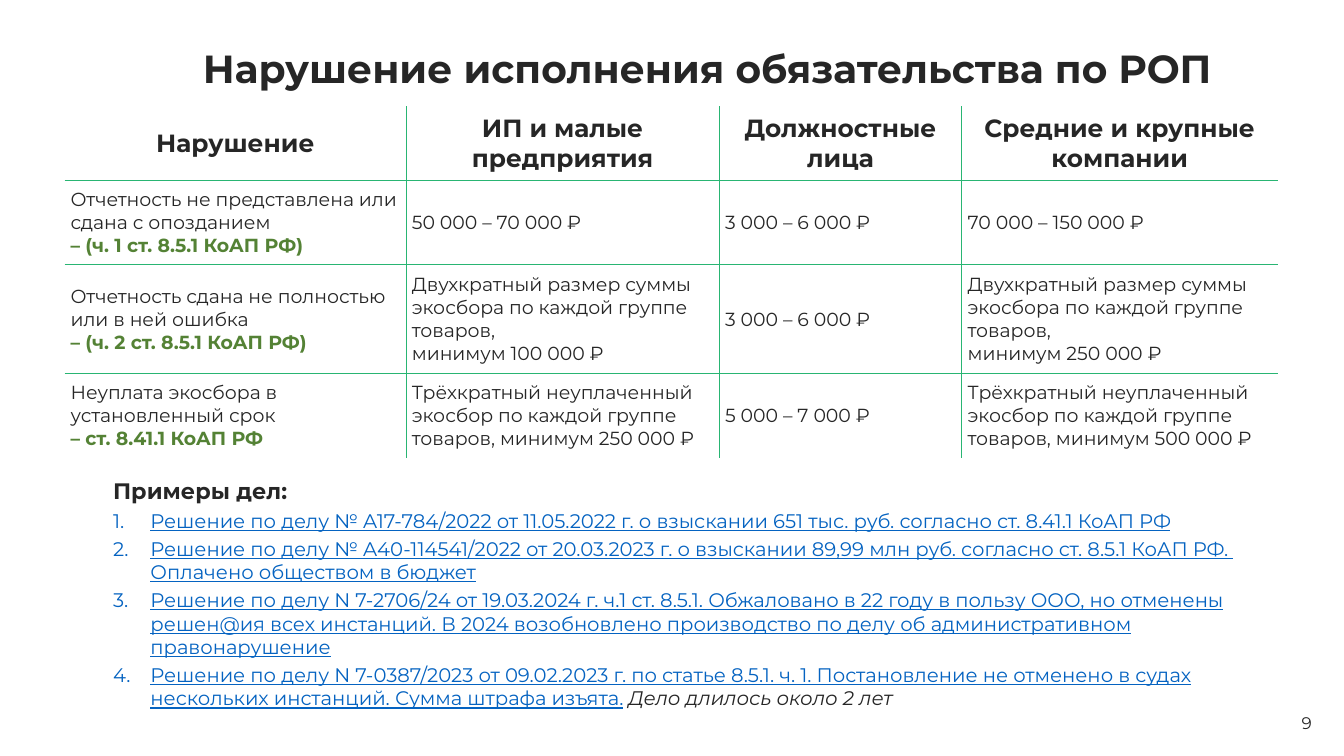
from dataclasses import dataclass

from lxml.etree import SubElement as Sub
from pptx import Presentation
from pptx.dml.color import RGBColor as RGB
from pptx.enum.text import MSO_ANCHOR as Anchor, MSO_AUTO_SIZE as Fit, PP_ALIGN as Align
from pptx.oxml.ns import qn
from pptx.util import Inches, Pt


@dataclass(frozen=True)
class Theme:
    font: str = "Montserrat"
    ink: str = "262626"
    law: str = "548235"
    link: str = "0563C1"
    line: str = "29B573"
    title: float = 33.1
    head: float = 21
    cell: float = 16
    lead: float = 18.9
    case: float = 16.6
    page: float = 14.2


T = Theme()

HEADS = ["Нарушение", "ИП и малые предприятия", "Должностные лица",
         "Средние и крупные компании"]
DOUBLE = "Двухкратный размер суммы экосбора по каждой группе товаров, \nминимум {} 000 ₽"
TRIPLE = "Трёхкратный неуплаченный экосбор по каждой группе товаров, минимум {} 000 ₽"
ROWS = [
    (("Отчетность не представлена или сдана с опозданием \n",
      "– (ч. 1 ст. 8.5.1 КоАП РФ)"),
     "50 000 – 70 000 ₽", "3 000 – 6 000 ₽", "70 000 – 150 000 ₽"),
    (("Отчетность сдана не полностью или в ней ошибка \n",
      "– (ч. 2 ст. 8.5.1 КоАП РФ)"),
     DOUBLE.format(100), "3 000 – 6 000 ₽", DOUBLE.format(250)),
    (("Неуплата экосбора в установленный срок \n", "– ст. 8.41.1 КоАП РФ"),
     TRIPLE.format(250), "5 000 – 7 000 ₽", TRIPLE.format(500)),
]
COLS = [4.01, 3.68, 2.85, 3.71]
HIGHS = [0.87, 0.99, 1.28, 0.99]

CASES = [
    "Решение по делу № А17-784/2022 от 11.05.2022 г. о взыскании 651 тыс. руб. "
    "согласно ст. 8.41.1 КоАП РФ",
    "Решение по делу № А40-114541/2022 от 20.03.2023 г. о взыскании 89,99 млн руб. "
    "согласно ст. 8.5.1 КоАП РФ. \nОплачено обществом в бюджет",
    "Решение по делу N 7-2706/24 от 19.03.2024 г. ч.1 ст. 8.5.1. Обжаловано в 22 году "
    "в пользу ООО, но отменены решен@ия всех инстанций. В 2024 возобновлено "
    "производство по делу об административном правонарушение",
    "Решение по делу N 7-0387/2023 от 09.02.2023 г. по статье 8.5.1. ч. 1. "
    "Постановление не отменено в судах нескольких инстанций. Сумма штрафа изъята.",
]
NOTE = "Дело длилось около 2 лет"


def write(para, text, size, color=T.ink, bold=False, italic=False, under=False):
    """Add text to a paragraph; a newline becomes a line break."""
    for i, part in enumerate(text.split("\n")):
        if i:
            para.add_line_break()
        if not part:
            continue
        run = para.add_run()
        run.text = part
        font = run.font
        font.name, font.size = T.font, Pt(size)
        font.bold, font.italic, font.underline = bold, italic, under
        font.color.rgb = RGB.from_string(color)


def add_text(slide, box):
    frame = slide.shapes.add_textbox(*map(Inches, box)).text_frame
    frame.word_wrap = True
    return frame


def add_title(slide, box, text):
    title = slide.shapes.title
    title.left, title.top, title.width, title.height = map(Inches, box)
    frame = title.text_frame
    frame.word_wrap, frame.auto_size = True, Fit.NONE
    frame.vertical_anchor = Anchor.TOP
    para = frame.paragraphs[0]
    para.alignment = Align.CENTER
    para.line_spacing, para.space_before = 1.25, Pt(11.8)
    write(para, text, T.title, bold=True)


def set_edges(cell, edges):
    """Draw the named sides of a cell and clear the others."""
    props = cell._tc.get_or_add_tcPr()
    for side in "LRTB":
        line = Sub(props, qn(f"a:ln{side}"), w=str(Pt(0.75)))
        if side in edges:
            fill = Sub(line, qn("a:solidFill"))
            Sub(fill, qn("a:srgbClr"), val=T.line)
        else:
            Sub(line, qn("a:noFill"))


def add_grid(slide, box):
    grid = slide.shapes.add_table(len(HIGHS), len(COLS), *map(Inches, box)).table
    grid.first_row = grid.horz_banding = False
    for col, width in zip(grid.columns, COLS):
        col.width = Inches(width)
    for row, high in zip(grid.rows, HIGHS):
        row.height = Inches(high)
    for r, row in enumerate([HEADS, *ROWS]):
        for c, item in enumerate(row):
            cell = grid.cell(r, c)
            cell.vertical_anchor = Anchor.MIDDLE
            cell.margin_left = cell.margin_right = Inches(0.07)
            cell.margin_top = cell.margin_bottom = Inches(0.07)
            inner = {"L": c > 0, "R": c < len(COLS) - 1,
                     "T": r > 0, "B": r < len(HIGHS) - 1}
            set_edges(cell, [side for side, on in inner.items() if on])
            cell.fill.background()
            para = cell.text_frame.paragraphs[0]
            if r == 0:
                para.alignment = Align.CENTER
                write(para, item, T.head, bold=True)
            elif c == 0:
                fault, law = item
                write(para, fault, T.cell)
                write(para, law, T.cell, T.law, bold=True)
            else:
                write(para, item, T.cell)


def add_cases(slide, box):
    left, top, width, high = box
    lead = add_text(slide, (left, top, 4.11, 0.42))
    write(lead.paragraphs[0], "Примеры дел:", T.lead, bold=True)
    frame = add_text(slide, (left, top + 0.38, width, high - 0.38))
    for i, case in enumerate(CASES):
        para = frame.add_paragraph() if i else frame.paragraphs[0]
        para.space_after = Pt(3.5)
        props = para._p.get_or_add_pPr()
        props.set("marL", str(Inches(0.44)))
        props.set("indent", str(Inches(-0.44)))
        Sub(props, qn("a:buFont"), typeface="+mj-lt")
        Sub(props, qn("a:buAutoNum"), type="arabicPeriod")
        write(para, case, T.case, T.link, under=True)
    write(para, " ", T.case)
    write(para, NOTE, T.case, italic=True)


def add_page(slide, box, text):
    frame = add_text(slide, box)
    frame.vertical_anchor = Anchor.MIDDLE
    para = frame.paragraphs[0]
    para.alignment = Align.RIGHT
    write(para, text, T.page)


def main():
    deck = Presentation()
    deck.slide_width, deck.slide_height = Inches(15.79), Inches(8.88)
    slide = deck.slides.add_slide(deck.slide_layouts[5])
    add_title(slide, (2.1, 0.33, 12.42, 0.74),
              "Нарушение исполнения обязательства по РОП")
    add_grid(slide, (0.76, 1.25, sum(COLS), sum(HIGHS)))
    add_cases(slide, (1.23, 5.55, 13.47, 2.88))
    add_page(slide, (12.04, 8.25, 3.47, 0.47), "9")
    deck.save("out.pptx")


if __name__ == "__main__":
    main()
